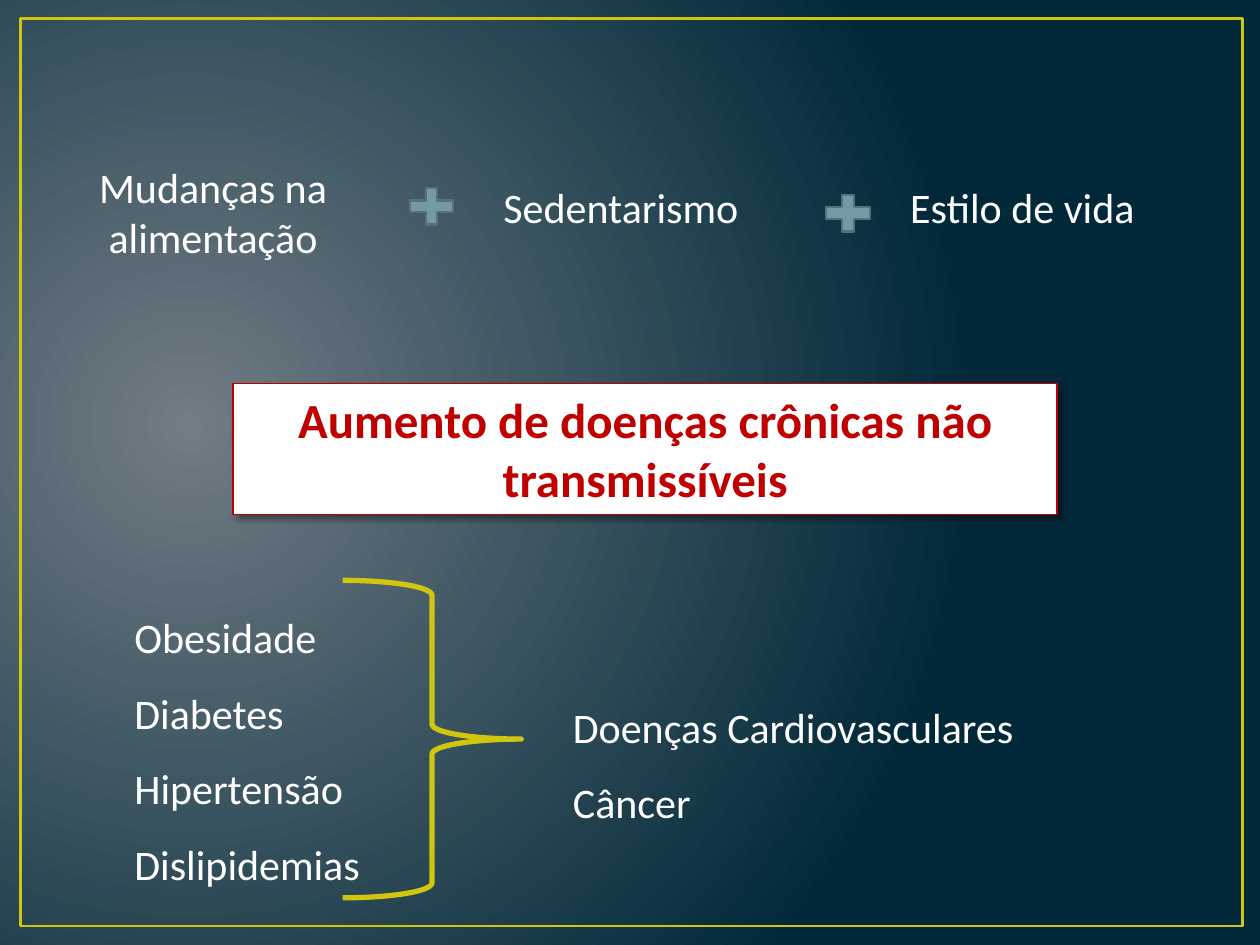
from lxml import etree
from pptx import Presentation
from pptx.dml.color import RGBColor
from pptx.enum.shapes import MSO_SHAPE as Shape
from pptx.enum.text import MSO_ANCHOR as Anchor, MSO_AUTO_SIZE as AutoSize, PP_ALIGN as Align
from pptx.oxml import parse_xml
from pptx.oxml.ns import qn
from pptx.util import Cm, Pt

WHITE = RGBColor(0xFF, 0xFF, 0xFF)
RED = RGBColor(0xC0, 0x00, 0x00)
YELLOW = RGBColor(0xCF, 0xC6, 0x0D)
PLUS_FILL = RGBColor(0x75, 0x9A, 0xA5)
PLUS_LINE = RGBColor(0x57, 0x72, 0x7A)
GLOW = RGBColor(0x71, 0x7C, 0x84)
NAVY = RGBColor(0x01, 0x29, 0x3A)
DRAWING_NS = "http://schemas.openxmlformats.org/drawingml/2006/main"


def paint_background(slide):
    """Fill the slide with a circular gradient centred on the left."""
    slide.background.fill.solid()
    solid = next(slide.element.iter(qn("a:solidFill")))
    gradient = parse_xml(
        f'<a:gradFill xmlns:a="{DRAWING_NS}" rotWithShape="1"><a:gsLst>'
        f'<a:gs pos="0"><a:srgbClr val="{GLOW}"/></a:gs>'
        f'<a:gs pos="100000"><a:srgbClr val="{NAVY}"/></a:gs></a:gsLst>'
        '<a:path path="circle"><a:fillToRect l="15000" t="50000" r="85000" b="60000"/></a:path>'
        '</a:gradFill>')
    solid.getparent().replace(solid, gradient)


def add_outline(slide, kind, box, color, width, fill=None):
    """Add a preset shape with a line and an optional fill."""
    shape = slide.shapes.add_shape(kind, *map(Cm, box))
    shape.shadow.inherit = False
    if fill is None:
        shape.fill.background()
    else:
        shape.fill.solid()
        shape.fill.fore_color.rgb = fill
    shape.line.color.rgb = color
    shape.line.width = Pt(width)
    return shape


def write_lines(frame, lines, size=24, color=WHITE, bold=None, align=Align.LEFT,
                spacing=None, wrap=True):
    """Write each line as a paragraph of one run."""
    frame.word_wrap = wrap
    frame.auto_size = AutoSize.SHAPE_TO_FIT_TEXT
    for index, line in enumerate(lines):
        paragraph = frame.add_paragraph() if index else frame.paragraphs[0]
        paragraph.alignment = align
        paragraph.line_spacing = spacing
        run = paragraph.add_run()
        run.text = line
        run.font.name = "Calibri"
        run.font.size = Pt(size)
        run.font.bold = bold
        run.font.color.rgb = color


def add_label(slide, box, lines, **style):
    """Add a text box holding the given lines."""
    label = slide.shapes.add_textbox(*map(Cm, box))
    write_lines(label.text_frame, lines, **style)


def add_causes(slide, left, top):
    """Place the three causes joined by plus signs."""
    add_label(slide, (left, top, 5.59, 2.31), ["Mudanças na alimentação"], align=Align.CENTER)
    add_label(slide, (left + 8.4, top + 0.4, 5.79, 1.27), ["Sedentarismo"], wrap=False)
    add_label(slide, (left + 16.6, top + 0.4, 5.61, 1.27), ["Estilo de vida"], wrap=False)
    for dx, dy in ((6.6, 0.53), (15.0, 0.67)):
        add_outline(slide, Shape.MATH_PLUS, (left + dx, top + dy, 1.2, 1.0),
                    PLUS_LINE, 1.25, PLUS_FILL)


def add_headline(slide, box):
    """Place the white headline panel with its soft shadow."""
    panel = add_outline(slide, Shape.RECTANGLE, box, RED, 0.75, WHITE)
    panel.text_frame.vertical_anchor = Anchor.TOP
    write_lines(panel.text_frame, ["Aumento de doenças crônicas não transmissíveis"],
                size=28, color=RED, bold=True, align=Align.CENTER)
    effects = panel.element.spPr.find(qn("a:effectLst"))
    shadow = etree.SubElement(effects, qn("a:outerShdw"), blurRad=str(Pt(4)), dist=str(Pt(3)),
                              dir="2700000", algn="tl", rotWithShape="0")
    black = etree.SubElement(shadow, qn("a:srgbClr"), val="000000")
    etree.SubElement(black, qn("a:alpha"), val="40000")


def add_consequences(slide, left, top, height):
    """Place the risk factors, the brace and the diseases they lead to."""
    add_label(slide, (left, top, 6.22, height),
              ["Obesidade", "Diabetes", "Hipertensão", "Dislipidemias"], spacing=1.5)
    add_label(slide, (left + 8.84, top + 1.8, 11.91, 3.33),
              ["Doenças Cardiovasculares", "Câncer"], spacing=1.5)
    add_outline(slide, Shape.RIGHT_BRACE, (left + 4.45, top, 3.6, height), YELLOW, 3)


def main():
    """Build and save the slide."""
    deck = Presentation()
    deck.slide_width, deck.slide_height = Cm(25.4), Cm(19.05)
    slide = deck.slides.add_slide(deck.slide_layouts[6])
    paint_background(slide)
    add_outline(slide, Shape.RECTANGLE, (0.41, 0.38, 24.64, 18.29), YELLOW, 1.5)
    add_causes(slide, 1.5, 3.13)
    add_headline(slide, (4.7, 7.73, 16.61, 2.64))
    add_consequences(slide, 2.46, 11.7, 6.4)
    deck.save("out.pptx")


if __name__ == "__main__":
    main()
